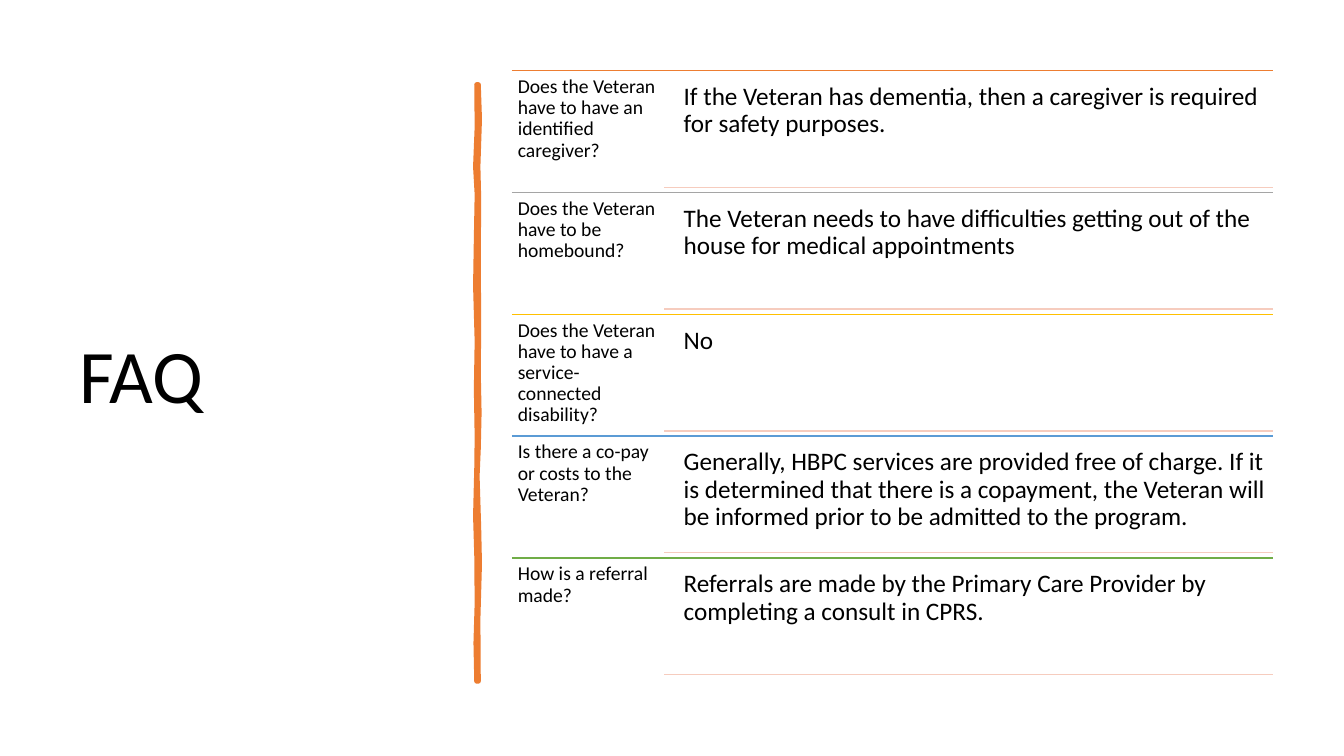
"""Build the FAQ slide: a title, a hand-drawn divider and five ruled questions with answers."""
from dataclasses import dataclass

from lxml import etree
from pptx import Presentation
from pptx.dml.color import RGBColor
from pptx.enum import shapes, text
from pptx.oxml import ns
from pptx.util import Cm, Pt


@dataclass(frozen=True)
class Theme:
    font: str = "Calibri"
    ink: str = "000000"
    divider: str = "ED7D31"
    answer_rule: str = "F6CCBE"
    row_rules: tuple = ("ED7D31", "A5A5A5", "FFC000", "5B9BD5", "70AD47")
    title_size: int = 54
    question_size: int = 14
    answer_size: int = 18


theme = Theme()
presentation = Presentation()
presentation.slide_width, presentation.slide_height = Cm(33.87), Cm(19.05)
slide = presentation.slides.add_slide(presentation.slide_layouts[6])


def add_text(words, *, left, top, width, height, size, inset, anchor=text.MSO_ANCHOR.TOP):
    box = slide.shapes.add_textbox(Cm(left), Cm(top), Cm(width), Cm(height))
    frame = box.text_frame
    frame.word_wrap = True
    frame.vertical_anchor = anchor
    frame.margin_left = frame.margin_right = Cm(inset)
    frame.margin_top = frame.margin_bottom = Cm(inset)
    paragraph = frame.paragraphs[0]
    paragraph.line_spacing = 0.9
    run = paragraph.add_run()
    run.text = words
    run.font.name = theme.font
    run.font.size = Pt(size)
    run.font.color.rgb = RGBColor.from_string(theme.ink)


def add_rule(left, right, top, color):
    rule = slide.shapes.add_connector(
        shapes.MSO_CONNECTOR.STRAIGHT, Cm(left), Cm(top), Cm(right), Cm(top))
    rule.line.color.rgb = RGBColor.from_string(color)
    rule.line.width = Pt(1)
    etree.SubElement(rule.element.spPr, ns.qn("a:effectLst"))


add_text("FAQ", left=1.75, top=1.78, width=9.5, height=15.52,
         size=theme.title_size, inset=0.25, anchor=text.MSO_ANCHOR.MIDDLE)

divider_right = [
    (12.06, 2.13), (12.09, 3.0), (12.05, 4.2), (12.07, 5.0), (12.06, 6.5),
    (12.07, 8.2), (12.06, 9.4), (12.08, 10.4), (12.06, 11.3), (12.03, 12.0),
    (12.07, 13.3), (12.09, 14.2), (12.05, 15.6), (12.06, 17.17)]
divider_left = [
    (12.01, 17.17), (11.99, 16.2), (12.02, 15.2), (12.01, 14.0), (11.98, 13.0),
    (12.01, 11.8), (12.02, 11.0), (12.0, 9.8), (12.02, 8.6), (11.98, 7.2),
    (12.0, 6.0), (12.02, 4.9), (11.98, 4.2), (12.02, 3.2), (12.01, 2.13)]
outline = [(Cm(x), Cm(y)) for x, y in divider_right + divider_left]
builder = slide.shapes.build_freeform(*outline[0])
builder.add_line_segments(outline[1:], close=True)
divider = builder.convert_to_shape()
divider.shadow.inherit = False
divider.fill.solid()
divider.fill.fore_color.rgb = RGBColor.from_string(theme.divider)
divider.line.color.rgb = RGBColor.from_string(theme.divider)
divider.line.width = Pt(3.25)

faq = [
    ("Does the Veteran have to have an identified caregiver?",
     "If the Veteran has dementia, then a caregiver is required for safety purposes."),
    ("Does the Veteran have to be homebound?",
     "The Veteran needs to have difficulties getting out of the house for medical appointments"),
    ("Does the Veteran have to have a service-connected disability?",
     "No"),
    ("Is there a co-pay or costs to the Veteran?",
     "Generally, HBPC services are provided free of charge. If it is determined that there is "
     "a copayment, the Veteran will be informed prior to be admitted to the program."),
    ("How is a referral made?",
     "Referrals are made by the Primary Care Provider by completing a consult in CPRS."),
]
first_top, row_height = 1.78, 3.07
question_left, answer_left, right_edge = 12.9, 17.04, 32.08

for row, ((question, answer), color) in enumerate(zip(faq, theme.row_rules)):
    top = first_top + row * row_height
    add_rule(question_left, right_edge, top, color)
    add_text(question, left=question_left, top=top, width=3.84, height=row_height,
             size=theme.question_size, inset=0.15)
    add_text(answer, left=answer_left, top=top + 0.14, width=right_edge - answer_left,
             height=2.8, size=theme.answer_size, inset=0.19)
    add_rule(16.74, right_edge, top + 2.94, theme.answer_rule)

presentation.save("out.pptx")
